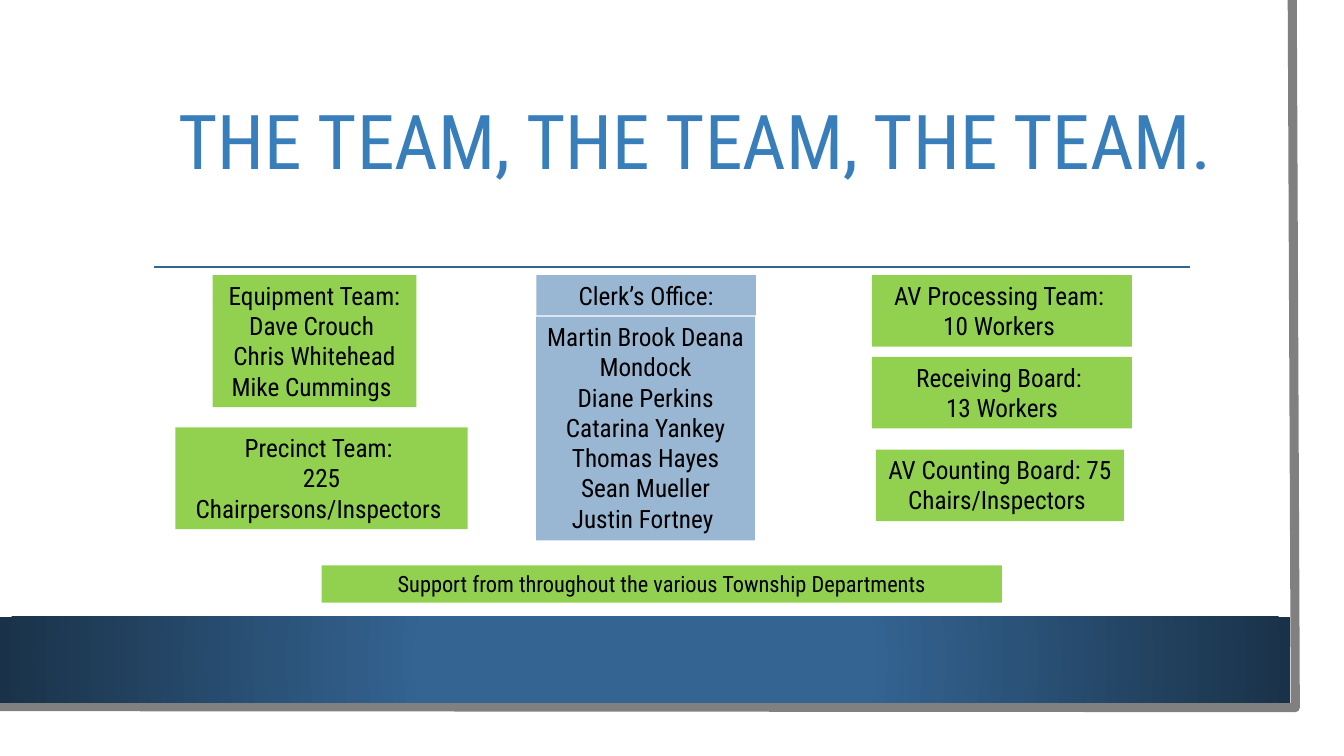
from lxml import etree
from pptx import Presentation
from pptx import util as u
from pptx.dml.color import RGBColor
from pptx.enum import shapes, text
from pptx.oxml import parse_xml
from pptx.oxml.ns import nsdecls, qn

# The slide is a grid of square cells, a tenth of an inch each.
CELL = u.Inches(0.1)
COLS, ROWS = 133.33, 75
FONT = "Roboto Condensed"
HUES = {
    "ink": "000000", "title": "377EBA", "band": "346492", "edge": "1A3249",
    "page": "FFFFFF", "frame": "808080", "green": "92D050", "blue": "99B6D3",
}


def grid(*cells):
    return [u.Emu(round(c * CELL)) for c in cells]


def hue(name):
    return RGBColor.from_string(HUES[name])


def style(font, size, name):
    look = {"name": FONT, "size": u.Pt(size)}
    for key, val in look.items():
        setattr(font, key, val)
    font.color.rgb = hue(name)


def rect(slide, box, fill):
    shape = slide.shapes.add_shape(shapes.MSO_SHAPE.RECTANGLE, *grid(*box))
    shape.shadow.inherit = False
    shape.fill.solid()
    shape.fill.fore_color.rgb = hue(fill)
    shape.line.fill.background()
    return shape


def glow(shape):
    """Fill the shape with a round gradient, light in the middle."""
    stops = "".join(
        f'<a:gs pos="{pos}000"><a:srgbClr val="{HUES[name]}"/></a:gs>'
        for pos, name in ((34, "band"), (100, "edge")))
    fill = parse_xml(
        f'<a:gradFill {nsdecls("a")} rotWithShape="1"><a:gsLst>{stops}</a:gsLst>'
        '<a:path path="circle"><a:fillToRect l="50000" t="50000" r="50000" '
        'b="50000"/></a:path></a:gradFill>')
    props = shape.fill._xPr
    props.replace(props.find(qn("a:solidFill")), fill)


def frame(slide, box):
    """Draw the page, its grey lower right edge and the blue band."""
    x, y, w, h = box
    rect(slide, box, "page")
    pen = slide.shapes.build_freeform(*grid(x + w - 2.8, y), scale=1.0)
    pen.add_line_segments(
        [grid(x + w - 2.5, y + h - 2.5), grid(x - 0.3, y + h - 2.6)], close=False)
    edge = pen.convert_to_shape()
    edge.shadow.inherit = False
    edge.fill.background()
    edge.line.color.rgb = hue("frame")
    edge.line.width = u.Pt(6.5)
    glow(rect(slide, (x, y + h - 11.5, w - 3, 8.5), "band"))


def rule(slide, x, y, w):
    x1, y1, x2 = grid(x, y, x + w)
    line = slide.shapes.add_connector(shapes.MSO_CONNECTOR.STRAIGHT, x1, y1, x2, y1)
    line.line.color.rgb = hue("band")
    line.line.width = u.Pt(1.25)
    etree.SubElement(line._element.spPr, qn("a:effectLst"))


def title(slide, box, words):
    body = slide.shapes.add_textbox(*grid(*box)).text_frame
    body.word_wrap = True
    body.vertical_anchor = text.MSO_ANCHOR.MIDDLE
    para = body.paragraphs[0]
    para.text = words
    para.line_spacing = 0.9
    style(para.font, 54, "title")


def card(slide, box, fill, lines, size=18):
    body = rect(slide, box, fill).text_frame
    look = {"word_wrap": True, "vertical_anchor": text.MSO_ANCHOR.TOP,
            "auto_size": text.MSO_AUTO_SIZE.SHAPE_TO_FIT_TEXT}
    for key, val in look.items():
        setattr(body, key, val)
    body.text = "\n".join(lines)
    for para in body.paragraphs:
        para.alignment = text.PP_ALIGN.CENTER
        style(para.font, size, "ink")


def column(slide, left, top, fill, cards):
    """Place cards, each given as (across, down, width, height, lines)."""
    for dx, dy, w, h, lines in cards:
        card(slide, (left + dx, top + dy, w, h), fill, lines)


def main():
    deck = Presentation()
    deck.slide_width, deck.slide_height = grid(COLS, ROWS)
    slide = deck.slides.add_slide(deck.slide_layouts[6])
    frame(slide, (0, 0, 131, 72.7))
    rule(slide, 15.3, 26.5, 102.8)
    title(slide, (16.7, 8.1, 113.7, 12.6), "THE TEAM, THE TEAM, THE TEAM.")

    top = 27.3
    column(slide, 17.4, top, "green", [
        (3.7, 0, 20.2, 13.1, ["Equipment Team:", "Dave Crouch ",
                              "Chris Whitehead", "Mike Cummings "]),
        (0, 15.1, 29, 10.1, ["Precinct Team: ", "225 Chairpersons/Inspectors "]),
    ])
    column(slide, 53.2, top, "blue", [
        (0, 0, 21.8, 4, ["Clerk’s Office:"]),
        (0, 4.1, 21.7, 22.2, ["Martin Brook Deana Mondock", "Diane Perkins",
                              "Catarina Yankey", "Thomas Hayes",
                              "Sean Mueller", "Justin Fortney "]),
    ])
    column(slide, 86.5, top, "green", [
        (0, 0, 25.8, 7.1, ["AV Processing Team: ", "10 Workers "]),
        (0, 8.1, 25.8, 7.1, ["Receiving Board: ", "13 Workers"]),
        (0.4, 17.3, 24.6, 7.1, ["AV Counting Board: 75 Chairs/Inspectors "]),
    ])
    card(slide, (31.9, 56.1, 67.5, 3.7), "green",
         ["Support from throughout the various Township Departments"], 16)
    deck.save("out.pptx")


if __name__ == "__main__":
    main()
